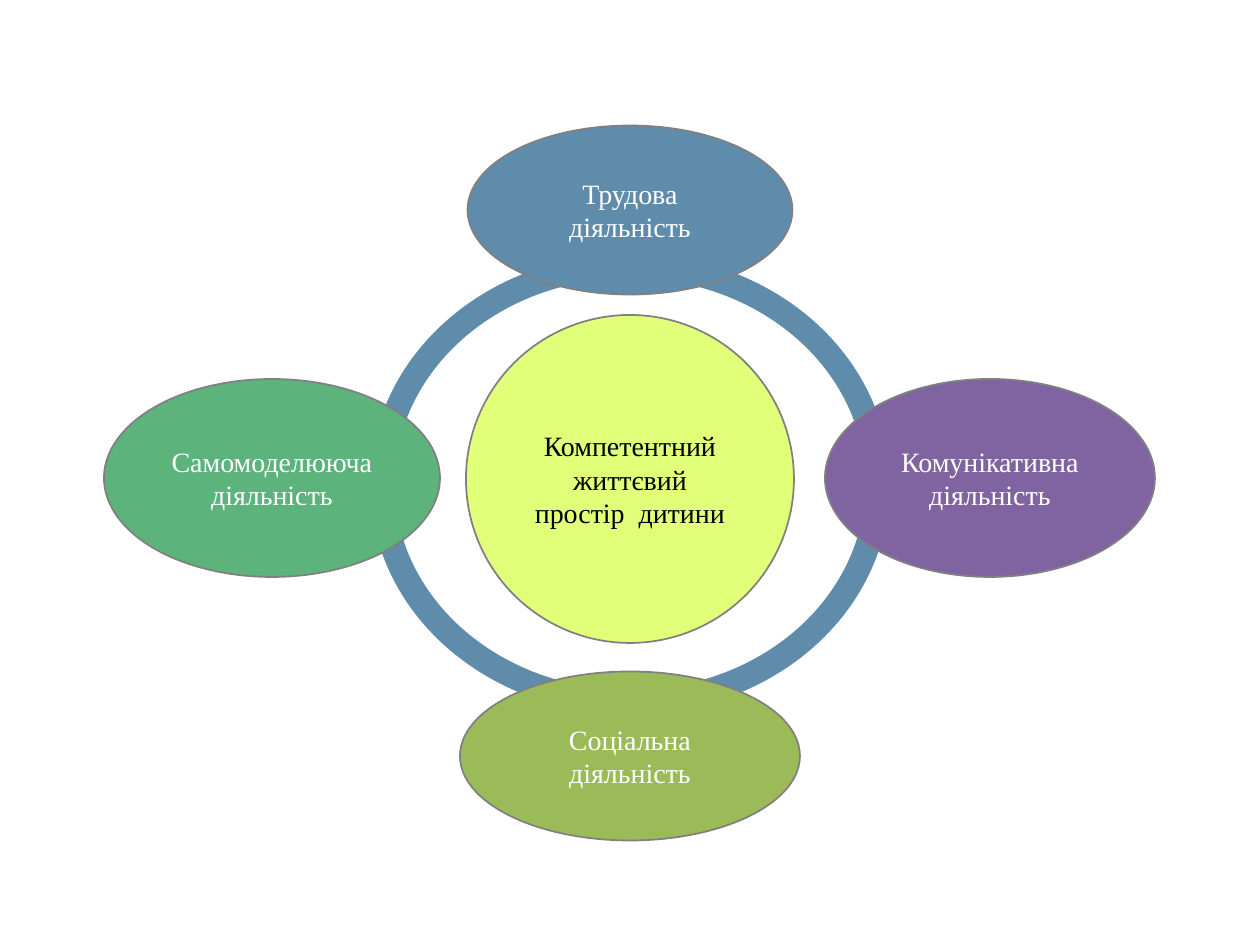
from pptx import Presentation
from pptx.dml.color import RGBColor
from pptx.enum.shapes import MSO_SHAPE
from pptx.enum.text import MSO_ANCHOR, PP_ALIGN
from pptx.util import Pt

OVAL, DONUT = MSO_SHAPE.OVAL, MSO_SHAPE.DONUT
MIDDLE, CENTER = MSO_ANCHOR.MIDDLE, PP_ALIGN.CENTER
PX = 914400 // 126
FONT = "Times New Roman"
COLORS = {
    "blue": "608CAB",
    "olive": "9BBB59",
    "green": "5CB37C",
    "purple": "8064A2",
    "lime": "E2FF79",
    "gray": "808080",
    "white": "FFFFFF",
    "black": "000000",
}


def rgb(name):
    return RGBColor.from_string(COLORS[name])


def add_centered(kind, cx, cy, w, h, fill, line, weight):
    sp = s.shapes.add_shape(
        kind, round((cx - w / 2) * PX), round((cy - h / 2) * PX), w * PX, h * PX
    )
    sp.shadow.inherit = False
    sp.fill.solid()
    sp.fill.fore_color.rgb = rgb(fill)
    sp.line.color.rgb = rgb(line)
    sp.line.width = Pt(weight)
    return sp


prs = Presentation()
prs.slide_width, prs.slide_height = 1260 * PX, 945 * PX
s = prs.slides.add_slide(prs.slide_layouts[6])

ring = add_centered(DONUT, 630, 484, 515, 456, "blue", "blue", 2.75)
ring.adjustments[0] = 0.043

ovals = [
    ("Трудова діяльність", 630, 210, 325, 169, "blue", "white"),
    ("Соціальна діяльність", 630, 756, 340, 169, "olive", "white"),
    ("Самомоделююча діяльність", 272, 478, 336, 198, "green", "white"),
    ("Комунікативна діяльність", 990, 478, 330, 198, "purple", "white"),
    ("Компетентний життєвий простір  дитини", 630, 479, 328, 328, "lime", "black"),
]
for text, cx, cy, w, h, fill, color in ovals:
    sp = add_centered(OVAL, cx, cy, w, h, fill, "gray", 1)
    tf = sp.text_frame
    tf.text = text
    tf.word_wrap = True
    tf.vertical_anchor = MIDDLE
    p = tf.paragraphs[0]
    p.alignment = CENTER
    r = p.runs[0]
    r.font.name = FONT
    r.font.size = Pt(16)
    r.font.color.rgb = rgb(color)

prs.save("out.pptx")
